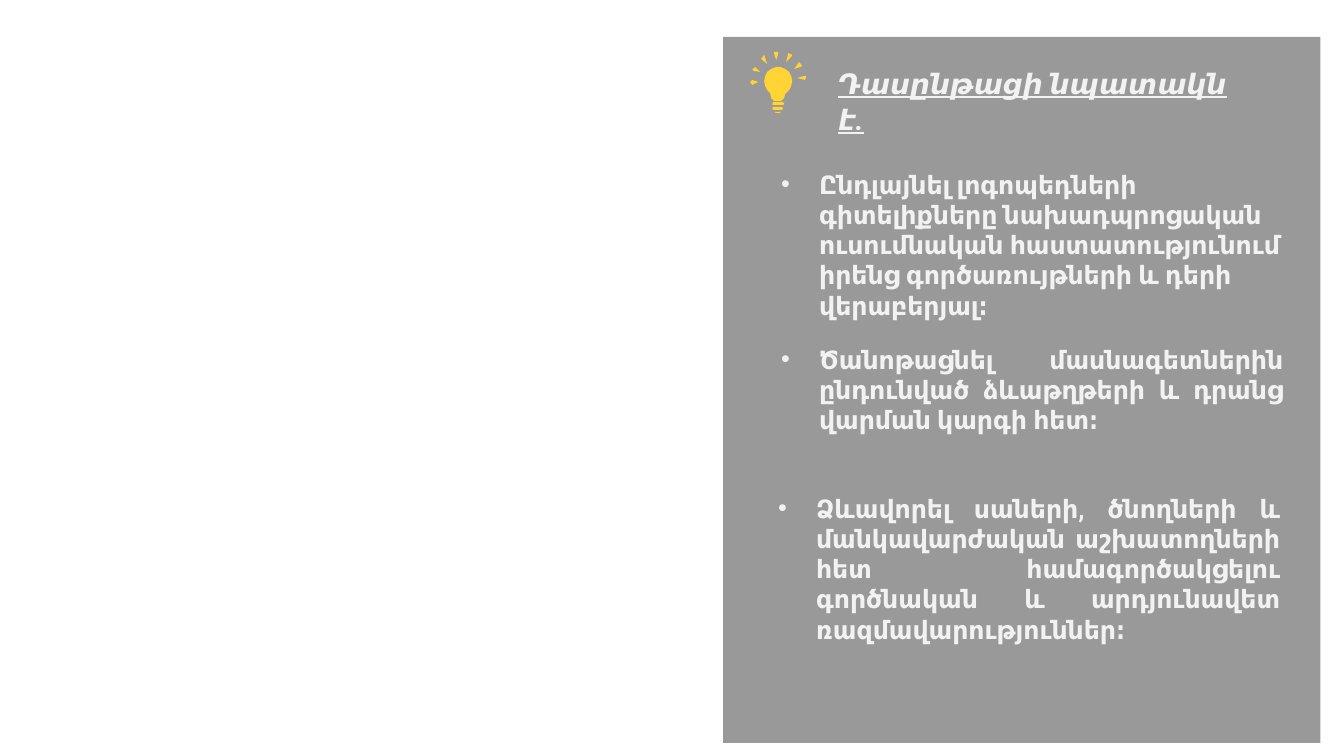
import math

import pptx
import pptx.dml.color
import pptx.enum.shapes
import pptx.enum.text
import pptx.oxml.ns
import pptx.util
from lxml import etree

COLOURS = {"panel": "000000", "text": "F2F2F2", "bulb": "FFD434"}

BULB_RAYS = [
    [(752, 80), (758, 82), (752, 85), (750, 82)],
    [(804, 76), (806, 76), (805, 80), (797, 78)],
    [(755, 67), (760, 72), (754, 71), (752, 70)],
    [(799, 62), (802, 66), (800, 67), (794, 69)],
    [(764, 55), (767, 64), (761, 59), (763, 56)],
    [(788, 53), (792, 55), (791, 57), (786, 62)],
    [(774, 52), (778, 52), (778, 54), (776, 60), (774, 54)],
]
BULB_BASE = [
    [(773, 102), (783, 102), (784, 104), (783, 105), (773, 105), (772, 104)],
    [(773, 107), (782, 107), (783, 109), (781, 110), (774, 110), (772, 109)],
    [(774, 112), (781, 112), (779, 113), (776, 113)],
]
GOALS = [
    (771, 164, 550, 132, "LEFT",
     "Ընդլայնել լոգոպեդների գիտելիքները նախադպրոցական ուսումնական "
     "հաստատությունում իրենց գործառույթների և դերի վերաբերյալ։"),
    (771, 339, 522, 102, "JUSTIFY",
     "Ծանոթացնել մասնագետներին ընդունված ձևաթղթերի և դրանց վարման կարգի հետ։"),
    (768, 488, 522, 132, "JUSTIFY",
     "Ձևավորել սաների, ծնողների և մանկավարժական աշխատողների հետ "
     "համագործակցելու գործնական և արդյունավետ ռազմավարություններ։"),
]


class SlideBuilder:
    scale = 914400 / 100.8
    font = "Roboto"

    def __init__(self, slide):
        self.shapes = slide.shapes

    def px(self, *lengths):
        return [round(length * self.scale) for length in lengths]

    def colour(self, name):
        return pptx.dml.color.RGBColor.from_string(COLOURS[name])

    def paint(self, shape, colour):
        shape.shadow.inherit = False
        shape.fill.solid()
        shape.fill.fore_color.rgb = self.colour(colour)
        shape.line.fill.background()

    def panel(self, left, top, width, height, colour, opacity):
        kind = pptx.enum.shapes.MSO_SHAPE.RECTANGLE
        panel = self.shapes.add_shape(kind, *self.px(left, top, width, height))
        self.paint(panel, colour)
        fill = panel.fill.fore_color._xFill
        alpha = etree.SubElement(fill[0], pptx.oxml.ns.qn("a:alpha"))
        alpha.set("val", str(opacity * 1000))

    def outline(self, contours, colour):
        first, *others = contours
        builder = self.shapes.build_freeform(*first[0], scale=self.scale)
        builder.add_line_segments(first[1:], close=True)
        for contour in others:
            builder.move_to(*contour[0])
            builder.add_line_segments(contour[1:], close=True)
        self.paint(builder.convert_to_shape(), colour)

    def text(self, left, top, width, height, words, size, align="LEFT"):
        box = self.shapes.add_textbox(*self.px(left, top, width, height))
        box.text_frame.word_wrap = True
        box.text_frame.auto_size = pptx.enum.text.MSO_AUTO_SIZE.SHAPE_TO_FIT_TEXT
        para = box.text_frame.paragraphs[0]
        para.alignment = getattr(pptx.enum.text.PP_ALIGN, align)
        span = para.add_run()
        span.text = words
        span.font.name = self.font
        span.font.size = pptx.util.Pt(size)
        span.font.bold = True
        span.font.color.rgb = self.colour("text")
        return para, span

    def title(self, left, top, width, height, words):
        para, span = self.text(left, top, width, height, words, 20)
        para.line_spacing = 1.07
        para.space_after = pptx.util.Pt(8)
        span.font.italic = True
        span.font.underline = True

    def bullet(self, left, top, width, height, align, words):
        para, span = self.text(left, top, width, height, words, 18, align)
        properties = para._p.get_or_add_pPr()
        indent, = self.px(38)
        properties.set("marL", str(indent))
        properties.set("indent", str(-indent))
        for tag, key, value in (("a:buFont", "typeface", "Arial"),
                                ("a:buChar", "char", "•")):
            etree.SubElement(properties, pptx.oxml.ns.qn(tag)).set(key, value)


def bulb_glass():
    angles = [math.radians(degrees) for degrees in range(140, 401, 20)]
    arc = [(round(778 + 14 * math.cos(angle), 2), round(81 + 14 * math.sin(angle), 2))
           for angle in angles]
    return arc + [(785, 94), (784, 98), (781, 101), (774, 101), (771, 98), (770, 93)]


def main():
    deck = pptx.Presentation()
    deck.slide_width = pptx.util.Inches(13.33)
    deck.slide_height = pptx.util.Inches(7.5)
    page = SlideBuilder(deck.slides.add_slide(deck.slide_layouts[6]))
    page.panel(723, 37, 597, 706, "panel", 40)
    page.title(828, 59, 433, 44, "Դասընթացի նպատակն է.")
    for goal in GOALS:
        page.bullet(*goal)
    page.outline([bulb_glass()] + BULB_RAYS + BULB_BASE, "bulb")
    deck.save("out.pptx")


if __name__ == "__main__":
    main()
